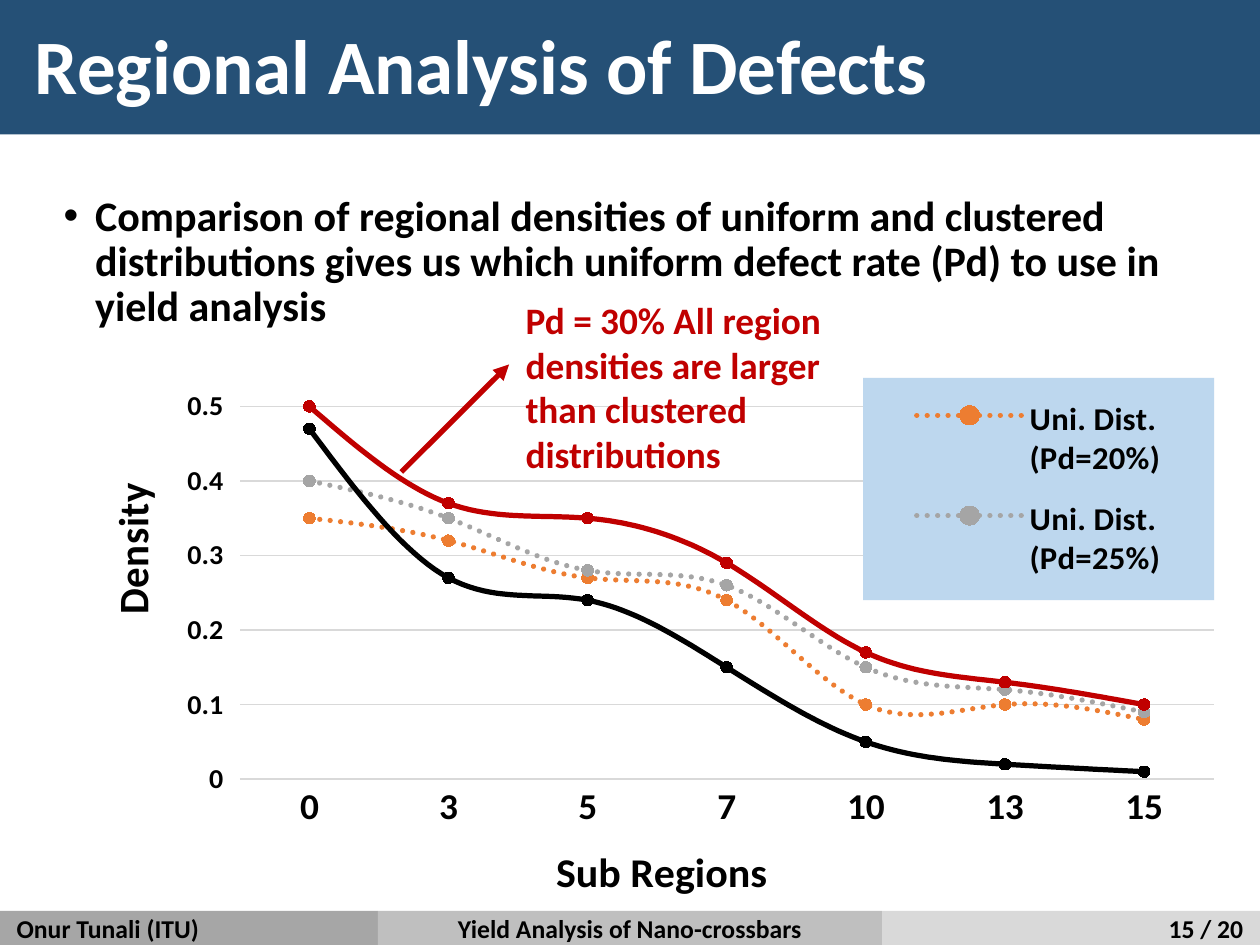
from lxml import etree
from pptx import Presentation
from pptx import util as u
from pptx.chart.data import CategoryChartData
from pptx.dml.color import RGBColor
from pptx.enum import chart as ch, dml, shapes, text
from pptx.oxml import parse_xml
from pptx.oxml.ns import nsdecls, qn

Pt = u.Pt
FONT = "Calibri"
BLACK, WHITE, RED, GRID = "000000", "FFFFFF", "C00000", "D9D9D9"
LEFT, CENTER, RIGHT = text.PP_ALIGN.LEFT, text.PP_ALIGN.CENTER, text.PP_ALIGN.RIGHT
TOP, MIDDLE = text.MSO_ANCHOR.TOP, text.MSO_ANCHOR.MIDDLE

CHART_BOX = (37.4, 130.3, 494.6, 259.9)
REGIONS = ["0", "3", "5", "7", "10", "13", "15"]
# Unnamed series are solid and have no legend entry.
DENSITIES = [
    ("Uni. Dist. (Pd=20%)", "ED7D31", [0.35, 0.32, 0.27, 0.24, 0.1, 0.1, 0.08]),
    ("Uni. Dist. (Pd=25%)", "A5A5A5", [0.4, 0.35, 0.28, 0.26, 0.15, 0.12, 0.09]),
    ("", RED, [0.5, 0.37, 0.35, 0.29, 0.17, 0.13, 0.1]),
    ("", BLACK, [0.47, 0.27, 0.24, 0.15, 0.05, 0.02, 0.01]),
]
FOOTER = [
    (0, 162, "A6A6A6", LEFT, "Onur Tunali (ITU)"),
    (162, 216, "BFBFBF", CENTER, "Yield Analysis of Nano-crossbars"),
    (378, 162, "D9D9D9", RIGHT, "15 / 20"),
]


def rgb(value):
    return RGBColor.from_string(value)


def set_attrs(obj, values):
    for name, value in values.items():
        setattr(obj, name, value)


def set_font(font, size, color=BLACK):
    set_attrs(font, {"name": FONT, "size": Pt(size), "bold": True})
    font.color.rgb = rgb(color)


def set_line(line, color, width):
    line.color.rgb = rgb(color)
    line.width = Pt(width)


def write(sp, words, size, color=BLACK, align=LEFT, anchor=TOP):
    tf = sp.text_frame
    set_attrs(tf, {"word_wrap": True, "vertical_anchor": anchor,
                   "margin_left": Pt(7.2), "margin_right": Pt(7.2),
                   "margin_top": Pt(3.6), "margin_bottom": Pt(3.6)})
    p = tf.paragraphs[0]
    p.alignment = align
    r = p.add_run()
    r.text = words
    set_font(r.font, size, color)
    return p


def add_text(s, box, words, size, **fmt):
    return write(s.shapes.add_textbox(*map(Pt, box)), words, size, **fmt)


def add_bar(s, box, fill):
    sp = s.shapes.add_shape(shapes.MSO_SHAPE.RECTANGLE, *map(Pt, box))
    sp.shadow.inherit = False
    sp.fill.solid()
    sp.fill.fore_color.rgb = rgb(fill)
    sp.line.fill.background()
    return sp


def add_bullet(p, indent):
    pPr = p._p.get_or_add_pPr()
    pPr.set("marL", str(Pt(indent)))
    pPr.set("indent", str(-Pt(indent)))
    etree.SubElement(pPr, qn("a:buFont")).set("typeface", "Arial")
    etree.SubElement(pPr, qn("a:buChar")).set("char", "•")


def add_arrow(s, start, end, color, width):
    cn = s.shapes.add_connector(shapes.MSO_CONNECTOR.STRAIGHT, *map(Pt, start + end))
    set_line(cn.line, color, width)
    etree.SubElement(cn.line._get_or_add_ln(), qn("a:tailEnd")).set("type", "triangle")
    etree.SubElement(cn._element.spPr, qn("a:effectLst"))


def place(element, box, after=None, inner=False):
    """Set a chart part's place, in points from the chart's corner.

    The layout goes behind the child named after, or first.
    """
    for old in element.findall(qn("c:layout")):
        element.remove(old)
    tags = [("layoutTarget", "inner")] if inner else []
    tags += [("xMode", "edge"), ("yMode", "edge")]
    tags += [(tag, length / size)
             for tag, length, size in zip("xywh", box, CHART_BOX[2:] * 2)]
    body = "".join(f'<c:{tag} val="{val}"/>' for tag, val in tags)
    layout = parse_xml(f'<c:layout {nsdecls("c")}><c:manualLayout>{body}'
                       '</c:manualLayout></c:layout>')
    index = 0 if after is None else element.index(element.find(qn(after))) + 1
    element.insert(index, layout)


def title_axis(axis, words, corner):
    title = axis.axis_title
    r = title.text_frame.paragraphs[0].add_run()
    r.text = words
    set_font(r.font, 18)
    place(title._element, corner, "c:tx")
    return title


def style_axes(chart):
    cat, val = chart.category_axis, chart.value_axis
    title_axis(cat, "Sub Regions", (197.7, 234.3))
    density = title_axis(val, "Density", (3.5, 77))
    density.text_frame._txBody.bodyPr.set("rot", "-5400000")
    density.text_frame._txBody.bodyPr.set("vert", "horz")
    set_font(cat.tick_labels.font, 16)
    set_font(val.tick_labels.font, 12)
    cat.major_tick_mark = ch.XL_TICK_MARK.NONE
    set_line(cat.format.line, GRID, 0.75)
    set_attrs(val, {"minimum_scale": 0, "maximum_scale": 0.55, "major_unit": 0.1,
                    "has_major_gridlines": True})
    set_attrs(val.tick_labels, {"number_format": "General",
                                "number_format_is_linked": False})
    set_line(val.major_gridlines.format.line, GRID, 0.75)
    val.format.line.fill.background()


def style_series(ser, color, dotted):
    ser.smooth = True
    line = ser.format.line
    set_line(line, color, 2.25)
    line._get_or_add_ln().set("cap", "rnd")
    if dotted:
        line.dash_style = dml.MSO_LINE.ROUND_DOT
    set_attrs(ser.marker, {"style": ch.XL_MARKER_STYLE.CIRCLE, "size": 5})
    fmt = ser.marker.format
    fmt.fill.solid()
    fmt.fill.fore_color.rgb = rgb(color)
    set_line(fmt.line, color, 0.75)


def style_legend(chart):
    chart.has_legend = True
    legend = chart.legend
    set_attrs(legend, {"position": ch.XL_LEGEND_POSITION.BOTTOM,
                       "include_in_layout": True})
    set_font(legend.font, 14)
    element = legend._element
    place(element, (332.6, 32.5, 150.4, 97.8), "c:legendPos")
    for index, (name, _, _) in enumerate(DENSITIES):
        if not name:
            element.find(qn("c:layout")).addprevious(parse_xml(
                f'<c:legendEntry {nsdecls("c")}><c:idx val="{index}"/>'
                '<c:delete val="1"/></c:legendEntry>'))
    element.find(qn("c:txPr")).addprevious(parse_xml(
        f'<c:spPr {nsdecls("c", "a")}><a:solidFill><a:srgbClr val="BDD7EE"/>'
        '</a:solidFill></c:spPr>'))


def add_density_chart(s):
    data = CategoryChartData()
    data.categories = REGIONS
    for name, _, values in DENSITIES:
        data.add_series(name, values)
    chart = s.shapes.add_chart(ch.XL_CHART_TYPE.LINE_MARKERS,
                               *map(Pt, CHART_BOX), data).chart
    chart.has_title = False
    set_attrs(chart.font, {"name": FONT, "size": Pt(10)})
    plot = chart.plots[0]
    plot.vary_by_categories = False
    for ser, (name, color, _) in zip(plot.series, DENSITIES):
        style_series(ser, color, dotted=bool(name))
    style_axes(chart)
    style_legend(chart)
    place(chart._chartSpace.chart.plotArea, (65.4, 28.7, 417.4, 180.5), inner=True)


def main():
    prs = Presentation()
    set_attrs(prs, {"slide_width": Pt(540), "slide_height": Pt(405)})
    s = prs.slides.add_slide(prs.slide_layouts[6])
    add_bar(s, (0, 0, 540, 57.6), "255076")
    p = add_text(s, (20.2, 79.9, 500.4, 284.4), "Comparison of regional densities of "
                 "uniform and clustered distributions gives us which uniform defect "
                 "rate (Pd) to use in yield analysis", 18)
    set_attrs(p, {"line_spacing": 0.9, "space_before": Pt(7.5)})
    add_bullet(p, 13.5)
    p = add_text(s, (7.9, 7.2, 524.2, 45.4), "Regional Analysis of Defects", 33,
                 color=WHITE, anchor=MIDDLE)
    p.line_spacing = 0.9
    for left, width, fill, align, words in FOOTER:
        bar = add_bar(s, (left, 390.4, width, 14.6), fill)
        write(bar, words, 11, align=align, anchor=MIDDLE)
    add_density_chart(s)
    add_arrow(s, (172, 202.3), (218.2, 156.2), RED, 2.25)
    add_text(s, (218.2, 123.8, 144, 85), "Pd = 30% All region densities are larger "
             "than clustered distributions", 16, color=RED)
    prs.save("out.pptx")


if __name__ == "__main__":
    main()
